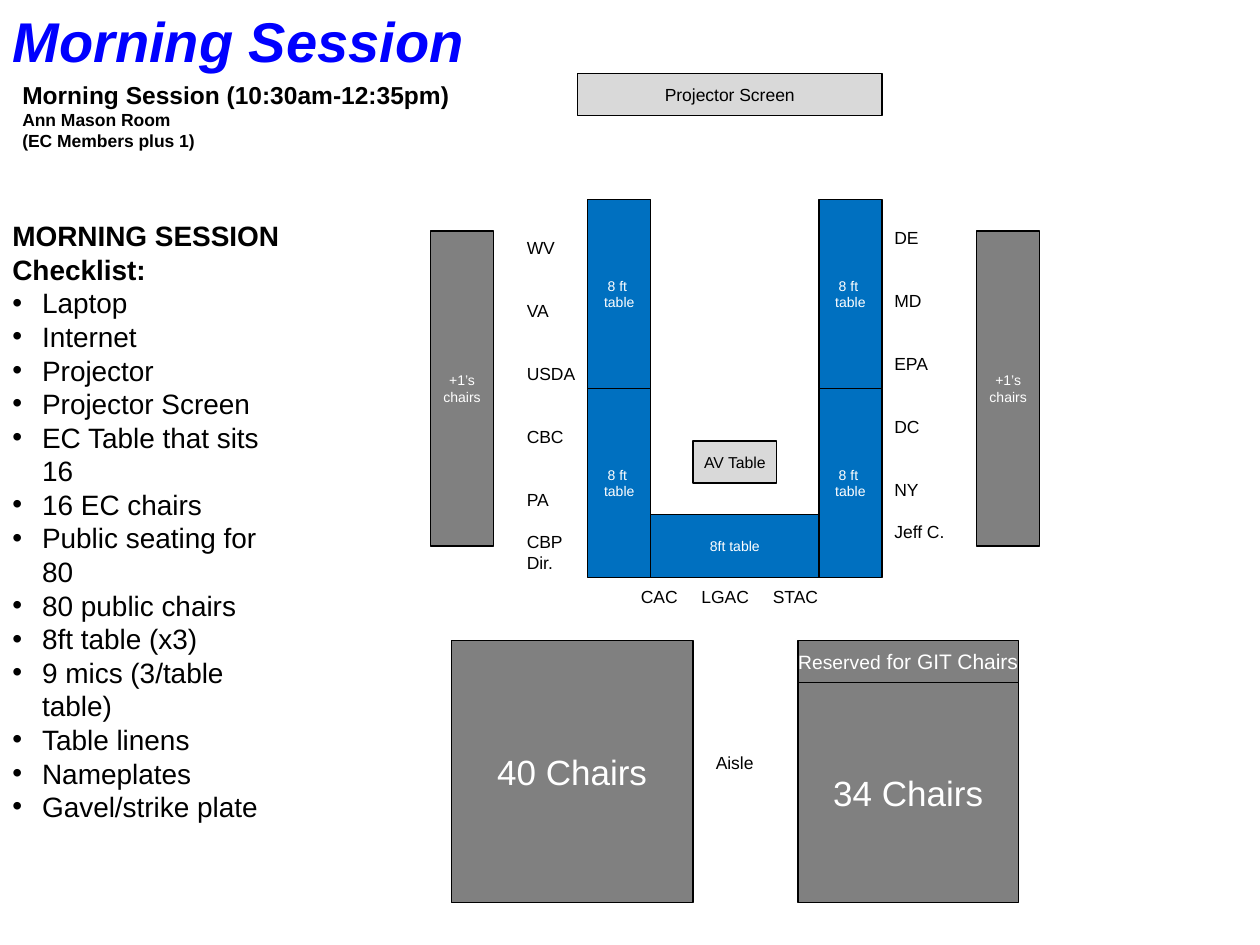
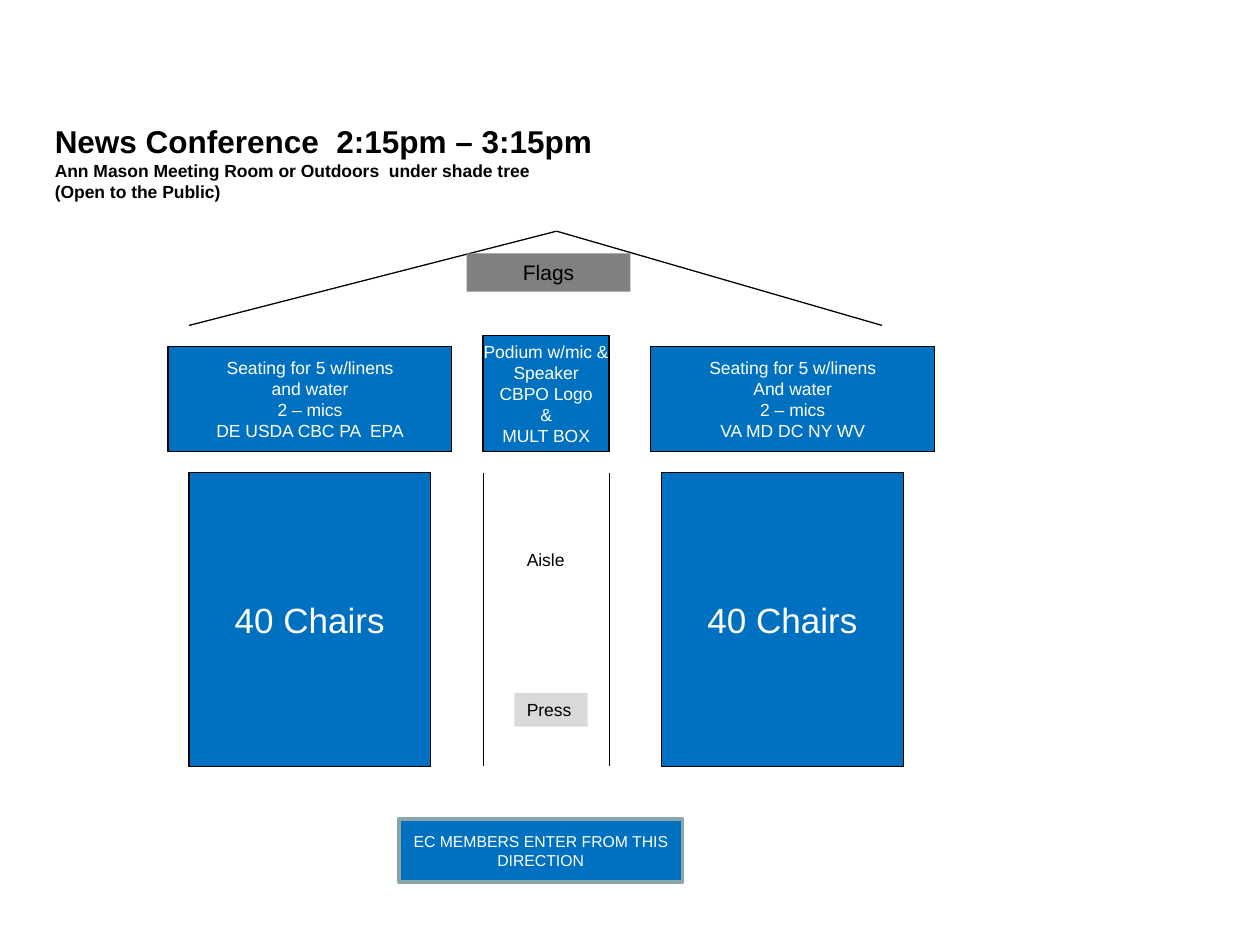
from lxml.etree import SubElement
from pptx import Presentation
from pptx.dml.color import RGBColor
from pptx.enum.shapes import MSO_CONNECTOR, MSO_SHAPE
from pptx.enum.text import MSO_ANCHOR, MSO_AUTO_SIZE, PP_ALIGN
from pptx.oxml.ns import qn
from pptx.util import Cm, Pt

FONT = "Arial"
BLACK = RGBColor(0x00, 0x00, 0x00)
WHITE = RGBColor(0xFF, 0xFF, 0xFF)
TITLE_BLUE = RGBColor(0x00, 0x00, 0xFF)
TABLE_BLUE = RGBColor(0x00, 0x70, 0xC0)
CHAIR_GRAY = RGBColor(0x80, 0x80, 0x80)
LIGHT_GRAY = RGBColor(0xD9, 0xD9, 0xD9)
FRAME_GRAY = RGBColor(0x8A, 0xA6, 0xA8)


def write(shape, lines, size, color=BLACK, bold=False, align=PP_ALIGN.LEFT, anchor=MSO_ANCHOR.TOP, wrap=True):
    text_frame = shape.text_frame
    text_frame.text = "\n".join(lines)
    text_frame.word_wrap = wrap
    text_frame.auto_size = MSO_AUTO_SIZE.NONE
    text_frame.vertical_anchor = anchor
    for paragraph in text_frame.paragraphs:
        paragraph.alignment = align
        for run in paragraph.runs:
            run.font.name = FONT
            run.font.size = Pt(size)
            run.font.bold = bold
            run.font.color.rgb = color
    return text_frame.paragraphs


def add_block(slide, box, lines, size, fill=TABLE_BLUE, color=WHITE, line=BLACK, wrap=False):
    shape = slide.shapes.add_shape(MSO_SHAPE.RECTANGLE, *map(Cm, box))
    shape.shadow.inherit = False
    shape.fill.solid()
    shape.fill.fore_color.rgb = fill
    if line is None:
        shape.line.fill.background()
    else:
        shape.line.color.rgb = line
        shape.line.width = Pt(0.75)
    write(shape, lines, size, color, align=PP_ALIGN.CENTER, anchor=MSO_ANCHOR.MIDDLE, wrap=wrap)
    return shape


presentation = Presentation()
presentation.slide_width = Cm(25.4)
presentation.slide_height = Cm(19.05)
title_only = presentation.slide_layouts[5]

morning = presentation.slides.add_slide(title_only)
title = morning.shapes.title
title.left, title.top, title.width, title.height = map(Cm, (0, 0, 23.7, 1.6))
heading = write(title, ["Morning Session"], 32, TITLE_BLUE, bold=True)[0]
heading.runs[0].font.italic = True

subtitle = morning.shapes.add_textbox(Cm(0.2), Cm(1.48), Cm(9.53), Cm(1.7))
session_lines = ["Morning Session (10:30am-12:35pm)", "Ann Mason Room", "(EC Members plus 1)"]
paragraphs = write(subtitle, session_lines, 10, bold=True)
paragraphs[0].runs[0].font.size = Pt(14)

for left in (11.85, 16.51):
    for top in (4.02, 7.83):
        add_block(morning, (left, top, 1.27, 3.81), ["8 ft ", "table"], 8)
add_block(morning, (13.12, 10.37, 3.39, 1.27), ["8ft table"], 8)
add_block(morning, (11.64, 1.48, 6.14, 0.85), ["Projector Screen"], 10, LIGHT_GRAY, BLACK)
add_block(morning, (13.97, 8.89, 1.69, 0.85), ["AV Table"], 9, LIGHT_GRAY, BLACK)
for left in (8.68, 19.69):
    add_block(morning, (left, 4.66, 1.27, 6.35), ["+1’s", "chairs"], 8, CHAIR_GRAY)
add_block(morning, (9.1, 12.91, 4.87, 5.29), ["40 Chairs"], 20, CHAIR_GRAY)
add_block(morning, (16.09, 13.76, 4.44, 4.44), ["34 Chairs"], 20, CHAIR_GRAY)
reserved = add_block(morning, (16.09, 12.91, 4.44, 0.85), ["Reserved"], 11, CHAIR_GRAY)
reserved_run = reserved.text_frame.paragraphs[0].add_run()
reserved_run.text = " for GIT Chairs"
reserved_run.font.name = FONT
reserved_run.font.size = Pt(12)
reserved_run.font.color.rgb = WHITE

seat_columns = [
    (10.37, 4.23, 7.9, 0.55, ["WV", "VA", "USDA", "CBC", "PA", "CBP Dir."]),
    (17.78, 4.45, 6.68, 0.13, ["DE", "MD", "EPA", "DC", "NY", "Jeff C."]),
]
for left, top, height, top_margin, names in seat_columns:
    seats = morning.shapes.add_textbox(Cm(left), Cm(top), Cm(1.69), Cm(height))
    seats.text_frame.margin_top = Cm(top_margin)
    paragraphs = write(seats, names, 10)
    for paragraph in paragraphs[1:-1]:
        paragraph.space_before = Pt(24)
    paragraphs[-1].space_before = Pt(12)

front_seats = morning.shapes.add_textbox(Cm(11.43), Cm(11.68), Cm(6.55), Cm(0.69))
front_seats.text_frame.margin_left = Cm(1.49)
paragraph = write(front_seats, ["CAC\tLGAC\tSTAC"], 10)[0]
tab_list = SubElement(paragraph._p.get_or_add_pPr(), qn("a:tabLst"))
for position in (1.22, 2.66):
    SubElement(tab_list, qn("a:tab"), pos=str(Cm(position)), algn="l")

checklist = morning.shapes.add_textbox(Cm(0), Cm(3.6), Cm(6.14), Cm(12.57))
checklist.text_frame.margin_top = Cm(0.81)
checklist_lines = [
    "MORNING SESSION", "Checklist:",
    "Laptop", "Internet", "Projector", "Projector Screen", "EC Table that sits 16",
    "16 EC chairs", "Public seating for 80", "80 public chairs", "8ft table (x3)",
    "9 mics (3/table table)", "Table linens", "Nameplates", "Gavel/strike plate",
]
paragraphs = write(checklist, checklist_lines, 16)
for paragraph in paragraphs[:2]:
    paragraph.runs[0].font.bold = True
for paragraph in paragraphs[2:]:
    properties = paragraph._p.get_or_add_pPr()
    properties.set("marL", str(Cm(0.6)))
    properties.set("indent", str(-Cm(0.6)))
    SubElement(properties, qn("a:buFont"), typeface=FONT)
    SubElement(properties, qn("a:buChar"), char="•")

news = presentation.slides.add_slide(title_only)
title = news.shapes.title
title.left, title.top, title.width, title.height = map(Cm, (0.85, 2.33, 11.85, 1.88))
news_lines = [
    "News Conference  2:15pm – 3:15pm",
    "Ann Mason Meeting Room or Outdoors  under shade tree",
    "(Open to the Public)",
]
paragraphs = write(title, news_lines, 10, bold=True)
paragraphs[0].runs[0].font.size = Pt(18)

seating_tables = [
    (3.39, "and water", "DE USDA CBC PA  EPA"),
    (13.12, "And water", "VA MD DC NY WV"),
]
for left, water, members in seating_tables:
    lines = ["Seating for 5 w/linens", water, "2 – mics", members]
    add_block(news, (left, 6.99, 5.72, 2.12), lines, 10)
podium_lines = ["Podium w/mic &", "Speaker", "CBPO Logo", "&", "MULT BOX"]
add_block(news, (9.74, 6.77, 2.54, 2.33), podium_lines, 10)
for left in (3.81, 13.34):
    add_block(news, (left, 9.53, 4.87, 5.93), ["40 Chairs"], 20)

tent_and_aisle = [
    (3.81, 6.56, 11.22, 4.66),
    (17.78, 6.56, 11.22, 4.66),
    (9.74, 9.53, 9.74, 15.45),
    (12.28, 9.53, 12.28, 15.45),
]
for ends in tent_and_aisle:
    connector = news.shapes.add_connector(MSO_CONNECTOR.STRAIGHT, *map(Cm, ends))
    connector.line.color.rgb = BLACK
    connector.line.width = Pt(0.75)
    SubElement(connector._element.spPr, qn("a:effectLst"))

add_block(news, (9.41, 5.11, 3.3, 0.77), ["Flags"], 12, CHAIR_GRAY, BLACK, None)
press = add_block(news, (10.37, 13.97, 1.48, 0.68), ["Press"], 10, LIGHT_GRAY, BLACK, None, wrap=True)
press.text_frame.paragraphs[0].alignment = PP_ALIGN.LEFT
entrance = add_block(
    news, (8.04, 16.51, 5.72, 1.27), ["EC MEMBERS ENTER FROM THIS DIRECTION"], 9, line=FRAME_GRAY, wrap=True
)
entrance.line.width = Pt(2)

for slide, left, top in ((morning, 14.18, 15.03), (news, 10.37, 10.95)):
    aisle = slide.shapes.add_textbox(Cm(left), Cm(top), Cm(1.4), Cm(0.68))
    write(aisle, ["Aisle"], 10)

presentation.save("out.pptx")
